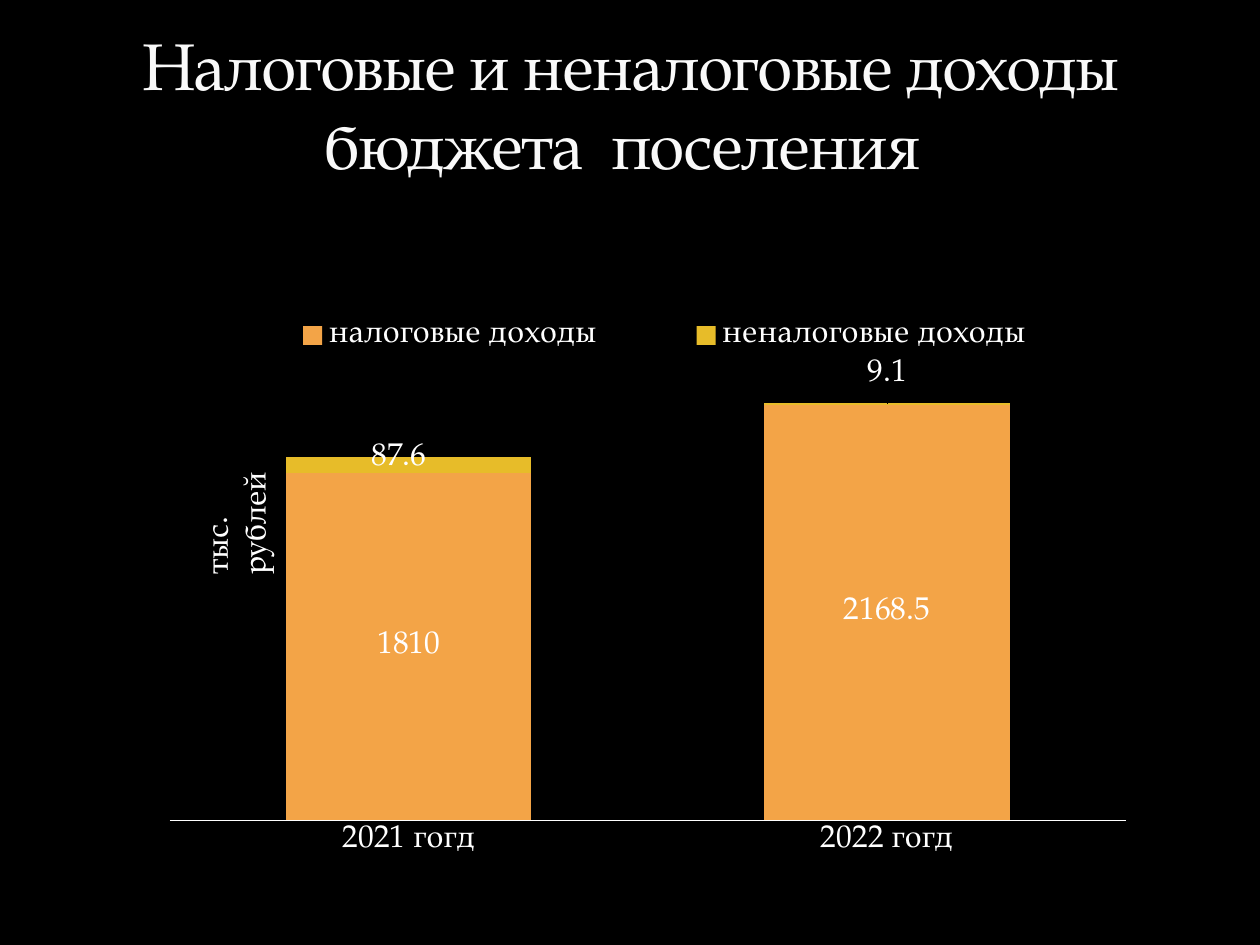
import pptx
import pptx.chart.data
import pptx.dml.color
import pptx.enum.chart
import pptx.enum.text
import pptx.oxml
import pptx.oxml.ns
import pptx.util
from pptx.util import Cm, Pt

# Content
TITLE = "Налоговые и неналоговые доходы бюджета  поселения "
UNIT = "тыс. рублей"
YEARS = ["2021 гогд", "2022 гогд"]
INCOME = [
    ("налоговые доходы", (1810, 2168.5), "tax"),
    ("неналоговые доходы", (87.6, 9.1), "other"),
]
LABEL_SHIFTS = [(-0.01, -0.01), (0, -0.05)]  # non-tax labels, share of chart size
FONT = "TeX Gyre Pagella"
COLORS = {
    "background": "000000", "title": "F9F9F9", "text": "FFFFFF",
    "tax": "F3A447", "other": "E7BC29",
}


def color(name):
    return pptx.dml.color.RGBColor.from_string(COLORS[name])


def style_font(font, size, color_name):
    font.name = FONT
    font.size = Pt(size)
    font.color.rgb = color(color_name)


def add_text(slide, text, box, size, color_name):
    shape = slide.shapes.add_textbox(*(Cm(length) for length in box))
    shape.text_frame.text = text
    shape.text_frame.word_wrap = True
    style_font(shape.text_frame.paragraphs[0].runs[0].font, size, color_name)
    return shape


def manual_layout(**values):
    """Build a c:layout element; the keywords are its children in order."""
    children = "".join(f'<c:{key} val="{value}"/>' for key, value in values.items())
    namespace = pptx.oxml.ns.nsdecls("c")
    return pptx.oxml.parse_xml(
        f"<c:layout {namespace}><c:manualLayout>{children}</c:manualLayout></c:layout>")


def set_layout(parent, before, layout):
    """Put the layout after the named child, in place of an older one."""
    for old in parent.xpath("c:layout"):
        parent.remove(old)
    if before is None:
        parent.insert(0, layout)
    else:
        parent.xpath(before)[0].addnext(layout)


def add_income_chart(slide):
    data = pptx.chart.data.CategoryChartData()
    data.categories = YEARS
    for name, values, _ in INCOME:
        data.add_series(name, values)
    chart = slide.shapes.add_chart(
        pptx.enum.chart.XL_CHART_TYPE.COLUMN_STACKED,
        Cm(3.1), Cm(6.12), Cm(20.19), Cm(11.71), data).chart
    chart.has_title = False
    style_font(chart.font, 18, "text")

    # Axes
    category_axis, value_axis = chart.category_axis, chart.value_axis
    category_axis.major_tick_mark = pptx.enum.chart.XL_TICK_MARK.NONE
    category_axis.format.line.color.rgb = color("text")
    category_axis.format.line.width = Pt(1)
    value_axis.visible = False
    value_axis.has_major_gridlines = False
    value_axis.minimum_scale, value_axis.maximum_scale = 0, 2500

    # Columns and their values
    plot = chart.plots[0]
    plot.gap_width, plot.overlap = 95, 100
    plot.vary_by_categories = False
    for series, (_, _, color_name) in zip(plot.series, INCOME):
        series.format.fill.solid()
        series.format.fill.fore_color.rgb = color(color_name)
        series.data_labels.show_value = True
        style_font(series.data_labels.font, 18, "text")
    other = plot.series[1]
    for index, (x, y) in enumerate(LABEL_SHIFTS):
        style_font(other.points[index].data_label.font, 18, "text")
        label = other._element.xpath(f"c:dLbls/c:dLbl[c:idx/@val={index}]")[0]
        set_layout(label, "c:idx", manual_layout(x=x, y=y))

    # Legend and plot area
    chart.has_legend = True
    chart.legend.position = pptx.enum.chart.XL_LEGEND_POSITION.TOP
    chart.legend.include_in_layout = False
    style_font(chart.legend.font, 18, "text")
    set_layout(chart.legend._element, "c:legendPos", manual_layout(
        xMode="edge", yMode="edge", x=0.06, y=0.02, w=0.9, h=0.07))
    set_layout(chart._chartSpace.xpath("c:chart/c:plotArea")[0], None, manual_layout(
        layoutTarget="inner", xMode="edge", yMode="edge",
        x=0.016, y=0.065, w=0.955, h=0.825))


def main():
    presentation = pptx.Presentation()
    presentation.slide_width, presentation.slide_height = Cm(25.4), Cm(19.05)
    slide = presentation.slides.add_slide(presentation.slide_layouts[6])
    slide.background.fill.solid()
    slide.background.fill.fore_color.rgb = color("background")

    add_income_chart(slide)

    # Title
    title = add_text(slide, TITLE, (1.27, 0.43, 22.86, 3.38), 37.8, "title")
    title.text_frame.vertical_anchor = pptx.enum.text.MSO_ANCHOR.BOTTOM
    paragraph = title.text_frame.paragraphs[0]
    paragraph.alignment = pptx.enum.text.PP_ALIGN.CENTER
    paragraph.runs[0].font._element.set("spc", "-100")

    # Unit beside the columns
    unit = add_text(slide, UNIT, (2.49, 9.47, 3.71, 1.02), 18, "text")
    unit.rotation = 270
    unit.text_frame.auto_size = pptx.enum.text.MSO_AUTO_SIZE.SHAPE_TO_FIT_TEXT

    presentation.save("out.pptx")


if __name__ == "__main__":
    main()
